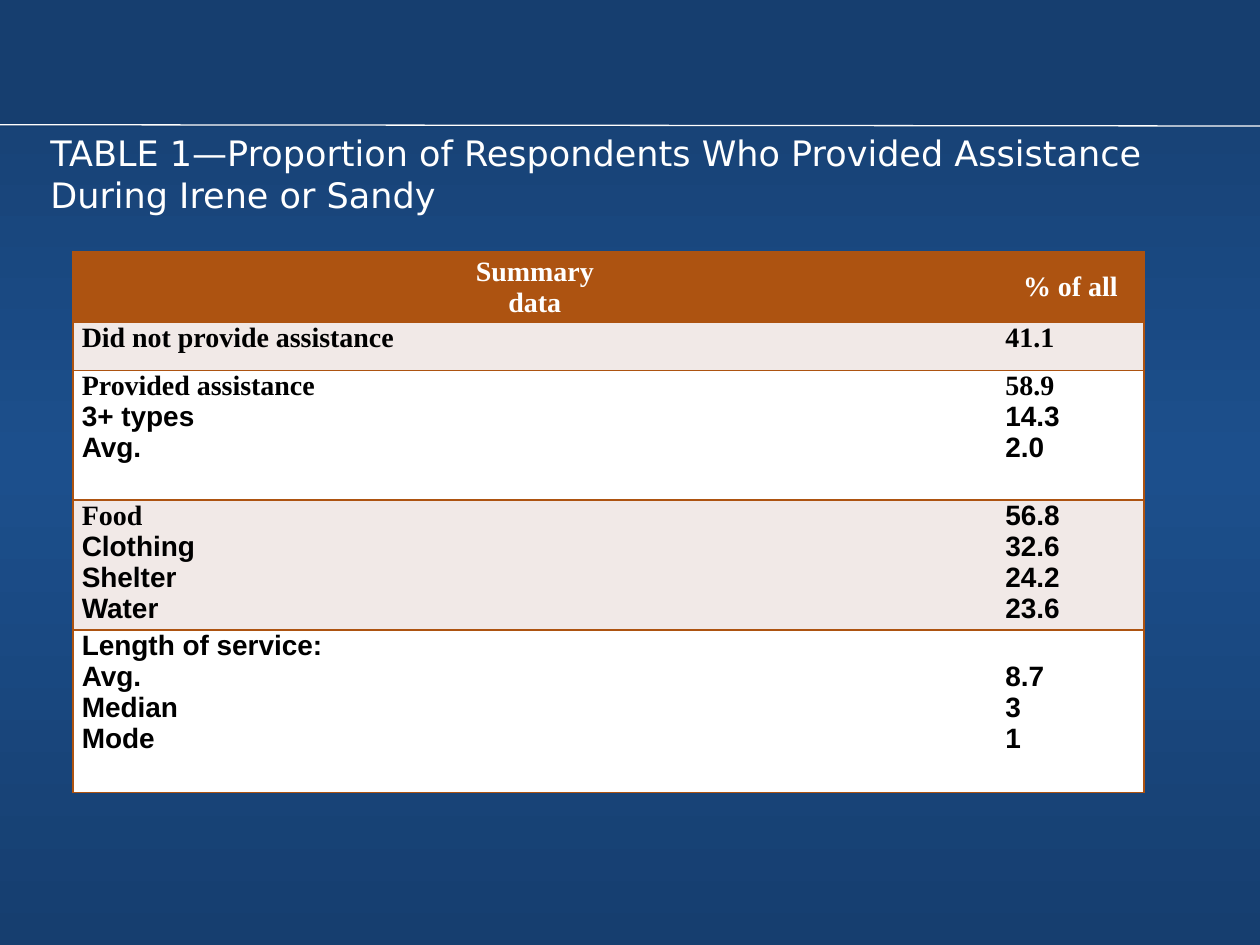
import copy
from dataclasses import dataclass

import pptx
import pptx.dml.color
import pptx.enum.shapes
import pptx.enum.text
import pptx.oxml
import pptx.oxml.ns
import pptx.util
from pptx.util import Inches, Pt

RGBColor = pptx.dml.color.RGBColor
Anchor = pptx.enum.text.MSO_ANCHOR
Align = pptx.enum.text.PP_ALIGN

NAVY = RGBColor(0x16, 0x3E, 0x6F)
BLUE = RGBColor(0x1C, 0x4F, 0x8C)
RUST = RGBColor(0xAD, 0x53, 0x11)
BLUSH = RGBColor(0xF1, 0xE9, 0xE7)
WHITE = RGBColor(0xFF, 0xFF, 0xFF)
BLACK = RGBColor(0, 0, 0)

SERIF = "Times New Roman"
SANS = "Arial"
TABLE_SIZE = Pt(16)
LINE_HEIGHT = 0.25
VALUE_INDENT = 0.25


@dataclass
class Band:
    """One table row; a serif count says how many leading lines are serif."""
    height: float
    fill: RGBColor
    labels: list[str]
    values: list[str]
    serif_labels: int = 0
    serif_values: int = 0
    is_header: bool = False


BANDS = [
    Band(0.56, RUST, ["Summary", "data"], ["% of all"], 2, 1, True),
    Band(0.38, BLUSH, ["Did not provide assistance"], ["41.1"], 1, 1),
    Band(1.03, WHITE, ["Provided assistance", "3+ types", "Avg."],
         ["58.9", "14.3", "2.0"], 1, 1),
    Band(1.03, BLUSH, ["Food", "Clothing", "Shelter", "Water"],
         ["56.8", "32.6", "24.2", "23.6"], 1),
    Band(1.29, WHITE, ["Length of service:", "Avg.", "Median", "Mode"],
         ["8.7", "3", "1"]),
]


def paint_background(page) -> None:
    fill = page.background.fill
    fill.gradient()
    fill.gradient_angle = 270
    stop_list = page.element.find(".//" + pptx.oxml.ns.qn("a:gsLst"))
    stop_list.insert(1, copy.deepcopy(stop_list[0]))
    stops = [(0, NAVY), (0.49, BLUE), (1, NAVY)]
    for stop, (position, color) in zip(fill.gradient_stops, stops):
        stop.position = position
        stop.color.rgb = color


def add_header_band(page) -> None:
    band = page.shapes.add_shape(pptx.enum.shapes.MSO_SHAPE.RECTANGLE,
                                 0, 0, Inches(10), Inches(1.01))
    band.shadow.inherit = False
    band.fill.solid()
    band.fill.fore_color.rgb = NAVY
    band.line.fill.background()

    rule = page.shapes.add_connector(pptx.enum.shapes.MSO_CONNECTOR.STRAIGHT,
                                     0, Inches(0.99), Inches(10), Inches(1))
    rule.line.color.rgb = WHITE
    rule.line.width = Pt(0.75)
    properties = rule.element.spPr
    properties.append(properties.makeelement(pptx.oxml.ns.qn("a:effectLst"), {}))


def format_title(page, text: str) -> None:
    title = page.shapes.title
    title.left, title.top = Inches(0.3), Inches(1)
    title.width, title.height = Inches(9.36), Inches(0.75)
    frame = title.text_frame
    frame.text = text
    frame.word_wrap = True
    frame.auto_size = pptx.enum.text.MSO_AUTO_SIZE.NONE
    frame.vertical_anchor = Anchor.MIDDLE
    paragraph = frame.paragraphs[0]
    paragraph.alignment = Align.LEFT
    paragraph.font.name = "DejaVu Sans"
    paragraph.font.size = Pt(20)
    paragraph.font.color.rgb = WHITE


def set_borders(cell, hidden_side: str) -> None:
    """Draw rust borders on every side but the one between the columns."""
    properties = cell._tc.get_or_add_tcPr()
    namespace = pptx.oxml.ns.nsdecls("a")
    for index, side in enumerate("LRTB"):
        paint = ("<a:noFill/>" if side == hidden_side else
                 f'<a:solidFill><a:srgbClr val="{RUST}"/></a:solidFill>')
        properties.insert(index, pptx.oxml.parse_xml(
            f'<a:ln{side} {namespace} w="{Pt(1)}">{paint}</a:ln{side}>'))


def fill_cell(cell, band: Band, lines: list[str], serif_count: int,
              indent: float) -> None:
    cell.margin_left = cell.margin_right = Inches(0.07)
    # Values that start below their heading keep level with their labels.
    skipped = 0 if band.is_header else len(band.labels) - len(lines)
    cell.margin_top = Inches(skipped * LINE_HEIGHT)
    cell.margin_bottom = 0
    cell.vertical_anchor = Anchor.MIDDLE if band.is_header else Anchor.TOP
    cell.fill.solid()
    cell.fill.fore_color.rgb = band.fill
    cell.text_frame.text = "\n".join(lines)
    for index, paragraph in enumerate(cell.text_frame.paragraphs):
        properties = paragraph._p.get_or_add_pPr()
        properties.set("marL", str(Inches(indent)))
        properties.set("indent", "0")
        paragraph.alignment = Align.CENTER if band.is_header else Align.LEFT
        paragraph.font.name = SERIF if index < serif_count else SANS
        paragraph.font.size = TABLE_SIZE
        paragraph.font.bold = True
        paragraph.font.color.rgb = WHITE if band.is_header else BLACK


def add_summary_table(page) -> None:
    height = sum(band.height for band in BANDS)
    table = page.shapes.add_table(len(BANDS), 2, Inches(0.58), Inches(2),
                                  Inches(8.5), Inches(height)).table
    table.columns[0].width = Inches(7.08)
    table.columns[1].width = Inches(1.42)
    for index, band in enumerate(BANDS):
        table.rows[index].height = Inches(band.height)
        label, value = table.cell(index, 0), table.cell(index, 1)
        fill_cell(label, band, band.labels, band.serif_labels,
                  VALUE_INDENT if band.is_header else 0)
        fill_cell(value, band, band.values, band.serif_values, VALUE_INDENT)
        set_borders(label, hidden_side="R")
        set_borders(value, hidden_side="L")


def main() -> None:
    deck = pptx.Presentation()
    deck.slide_width, deck.slide_height = Inches(10), Inches(7.5)
    page = deck.slides.add_slide(deck.slide_layouts[5])
    paint_background(page)
    add_header_band(page)
    format_title(page, "TABLE 1—Proportion of Respondents Who Provided "
                       "Assistance During Irene or Sandy")
    add_summary_table(page)
    deck.save("out.pptx")


if __name__ == "__main__":
    main()
